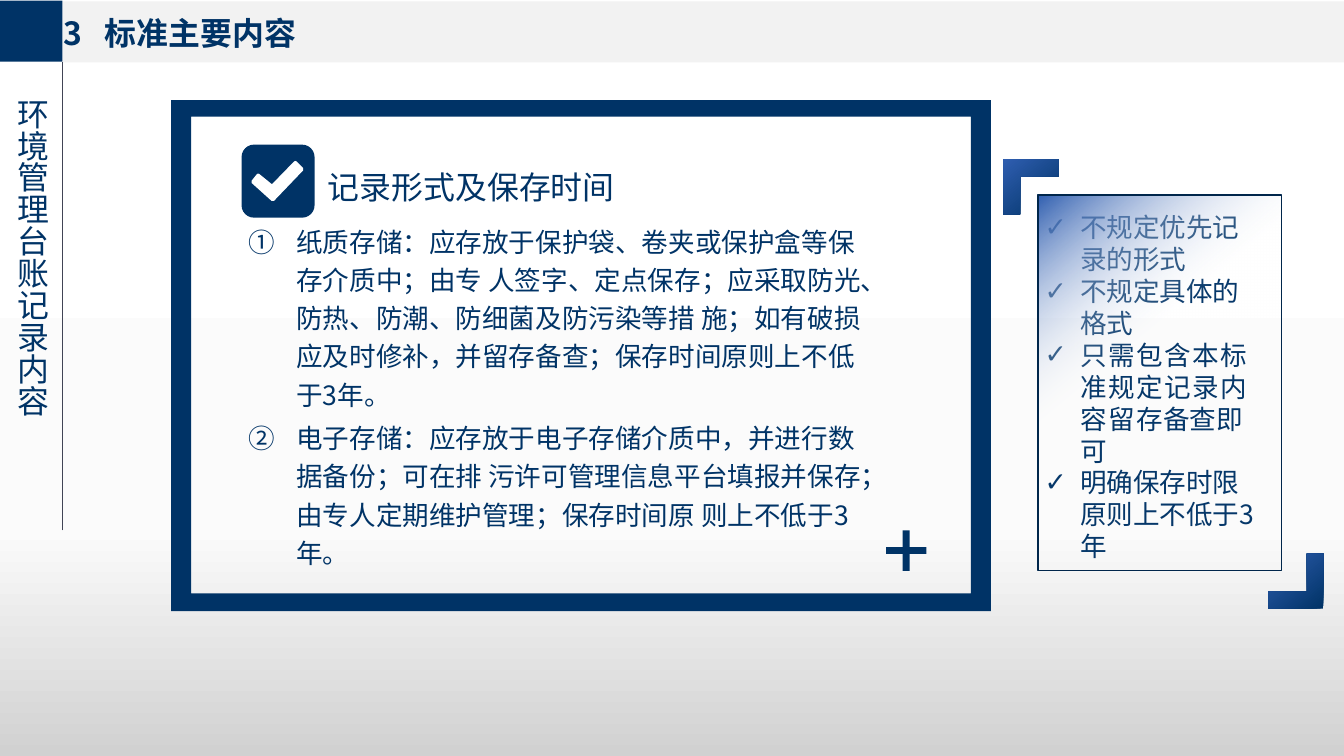
from lxml.etree import SubElement as Sub
from pptx import Presentation
from pptx.dml.color import RGBColor as Rgb
from pptx.enum.shapes import MSO_CONNECTOR as Link, MSO_SHAPE as Kind
from pptx.enum.text import MSO_ANCHOR as Anchor, MSO_AUTO_SIZE as Fit, PP_ALIGN as Align
from pptx.oxml.ns import qn
from pptx.util import Pt

HUES = {"navy": "003366", "dark": "00264B", "blue": "2F5EB0", "band": "F2F2F2",
        "rule": "414455", "white": "FFFFFF", "pale": "FBFBFB", "grey": "D1D1D1"}
SANS = "Noto Sans CJK SC"
BRACE = [(0, 0), (41.5, 0), (41.5, 13), (12.5, 13), (12.5, 41.5), (0, 41.5)]
FRAME = [[(129, 75.5), (746.5, 75.5), (746.5, 460.5), (129, 460.5)],
         [(144, 88), (144, 447), (731.5, 447), (731.5, 88)]]
TICK = [(222.5, 122.5), (227.5, 127.5), (205.5, 150.5), (190.5, 137), (194.5, 132), (205, 140.5)]
STORE = ["纸质存储：应存放于保护袋、卷夹或保护盒等保存介质中；由专 人签字、定点保存；应采取防光、防热、防潮、"
         "防细菌及防污染等措 施；如有破损应及时修补，并留存备查；保存时间原则上不低于3年。",
         "电子存储：应存放于电子存储介质中，并进行数据备份；可在排 污许可管理信息平台填报并保存；"
         "由专人定期维护管理；保存时间原 则上不低于3年。"]
NOTES = [[("不规定优先记录的形式", -0.1)], [("不规定具体的格式", -0.1)],
         [("只需包含本标准规定记录内容留", 1.1), ("存备查即可", -0.1)],
         [("明确保存时限原则上不低于3年", -0.1)]]


def assign(item, **vals):
    """Set each given value as an attribute of the item."""
    for key, val in vals.items():
        setattr(item, key, val)


def hue(name):
    """Return the named colour."""
    return Rgb.from_string(HUES[name])


class Deck:
    """Holds the style and the current slide."""

    def __init__(self, wide, high):
        """Start a slide with a title and two lists."""
        self.file = Presentation()
        assign(self.file, slide_width=Pt(wide), slide_height=Pt(high))
        self.slide = self.file.slides.add_slide(self.file.slide_layouts[3])
        self.shapes = self.slide.shapes

    def blend(self, root, stops, angle):
        """Swap the solid fill under root for a gradient."""
        old = root.find(qn("a:solidFill"))
        grad = root.makeelement(qn("a:gradFill"), {"rotWithShape": "1"})
        root.replace(old, grad)
        row = Sub(grad, qn("a:gsLst"))
        for spot, name, alpha in stops:
            stop = Sub(row, qn("a:gs"), pos=str(spot * 1000))
            tint = Sub(stop, qn("a:srgbClr"), val=HUES[name])
            if alpha < 100:
                Sub(tint, qn("a:alpha"), val=str(alpha * 1000))
        Sub(grad, qn("a:lin"), ang=str(angle * 60000), scaled="0")

    def back(self, stops):
        """Fill the background from top to bottom."""
        self.slide.background.fill.solid()
        self.blend(self.slide.element.find(".//" + qn("p:bgPr")), stops, 90)

    def paint(self, shape, fill, line=None, width=1):
        """Give a shape its fill and line."""
        shape.shadow.inherit = False
        shape.fill.solid()
        if isinstance(fill, str):
            shape.fill.fore_color.rgb = hue(fill)
        else:
            self.blend(shape.element.spPr, fill, 230)
        if line:
            shape.line.color.rgb = hue(line)
            shape.line.width = Pt(width)
        else:
            shape.line.fill.background()

    def block(self, kind, box, fill, line=None, adjust=None):
        """Draw a preset shape."""
        shape = self.shapes.add_shape(kind, *map(Pt, box))
        if adjust is not None:
            shape.adjustments[0] = adjust
        self.paint(shape, fill, line)

    def form(self, loops, fill, line=None, width=1):
        """Draw an outline made of closed loops."""
        loops = [[(Pt(x), Pt(y)) for x, y in loop] for loop in loops]
        pen = self.shapes.build_freeform(*loops[0][0])
        for loop in loops:
            if loop is not loops[0]:
                pen.move_to(*loop[0])
            pen.add_line_segments(loop[1:], close=True)
        self.paint(pen.convert_to_shape(), fill, line, width)

    def brace(self, x, y, sign):
        """Draw a corner mark, turned round when sign is -1."""
        self.form([[(x + sign * a, y + sign * b) for a, b in BRACE]],
                  [(0, "navy", 100), (100, "blue", 100)])

    def rule(self, ends, name, width):
        """Draw a straight line."""
        line = self.shapes.add_connector(Link.STRAIGHT, *map(Pt, ends))
        line.line.color.rgb = hue(name)
        line.line.width = Pt(width)
        Sub(line.element.spPr, qn("a:effectLst"))

    def label(self, box, text, **style):
        """Add a text box."""
        self.typeset(self.shapes.add_textbox(*map(Pt, box)), box, [text], **style)

    def holder(self, index, box, paras, **style):
        """Move a placeholder to the front and fill it with text."""
        shape = self.slide.placeholders[index]
        self.shapes.element.append(shape.element)
        self.typeset(shape, box, paras, **style)

    def typeset(self, shape, box, paras, size=24, font=SANS, bold=False, inset=(0, 0, 0, 0),
                wrap=True, anchor=Anchor.TOP, hang=None, mark=None, vert=None, para=None):
        """Fill a shape with formatted paragraphs."""
        assign(shape, **dict(zip(("left", "top", "width", "height"), map(Pt, box))))
        frame = shape.text_frame
        sides = ("margin_left", "margin_top", "margin_right", "margin_bottom")
        assign(frame, word_wrap=wrap, auto_size=Fit.NONE, vertical_anchor=anchor,
               **dict(zip(sides, map(Pt, inset))))
        if vert:
            shape.element.txBody.find(qn("a:bodyPr")).set("vert", vert)
        for num, runs in enumerate(paras):
            line = frame.add_paragraph() if num else frame.paragraphs[0]
            assign(line, **{"alignment": Align.LEFT, **(para or {})})
            props = line._p.get_or_add_pPr()
            if hang:
                props.set("marL", str(Pt(hang[0])))
                props.set("indent", str(Pt(hang[1])))
            if mark:
                Sub(props, qn(mark[0]), **mark[1])
            for text, space in [(runs, 0)] if isinstance(runs, str) else runs:
                run = line.add_run()
                run.text = text
                assign(run.font, size=Pt(size), name=font, bold=bold)
                run.font.color.rgb = hue("navy")
                look = run._r.get_or_add_rPr()
                Sub(look, qn("a:ea"), typeface=font)
                if space:
                    look.set("spc", str(round(space * 100)))


def main():
    """Build the slide and save it."""
    deck = Deck(1012.5, 569.5)
    deck.back([(14, "white", 100), (70, "pale", 100), (100, "grey", 100)])
    deck.block(Kind.RECTANGLE, (47, 1, 965.5, 46), "band")
    deck.block(Kind.RECTANGLE, (0, 0.5, 47, 46), "navy")
    deck.holder(0, (48, 10, 176.5, 29.5), ["3\t标准主要内容"], bold=True, wrap=False, hang=(31, -31))
    deck.label((10, 74, 29, 386), "环境管理台账记录内容", vert="eaVert")
    deck.rule((47, 399.5, 47, 47), "rule", 0.25)
    pad = (7.2, 3.6, 7.2, 3.6)
    deck.label((240, 108.5, 234.5, 51), "记录形式及保存时间", font="Roboto Condensed",
               inset=pad, wrap=False, para={"line_spacing": 1.5})
    deck.block(Kind.ROUNDED_RECTANGLE, (182, 109, 55, 55), "navy", adjust=0.17)
    deck.form([TICK], "white", "white", 2.5)
    deck.form(FRAME, "navy")
    deck.block(Kind.CROSS, (667.5, 399.5, 30.5, 30.5), "navy", adjust=0.414)
    deck.holder(1, (180, 164, 485.5, 265.5), STORE, size=20, inset=pad, anchor=Anchor.MIDDLE,
                hang=(36, -36), mark=("a:buAutoNum", {"type": "circleNumDbPlain"}),
                para={"line_spacing": 1.2})
    deck.holder(2, (769, 158.5, 177, 268), NOTES, size=20, inset=(0, 0.7, 0, 0),
                hang=(45, -27), mark=("a:buChar", {"char": "✓"}),
                para={"line_spacing": 1.0, "space_before": Pt(0)})
    deck.brace(756, 120, 1)
    deck.brace(997, 458.5, -1)
    deck.block(Kind.RECTANGLE, (782, 147, 183.5, 283),
               [(59, "white", 2), (100, "blue", 100)], "dark")
    deck.file.save("out.pptx")


if __name__ == "__main__":
    main()
